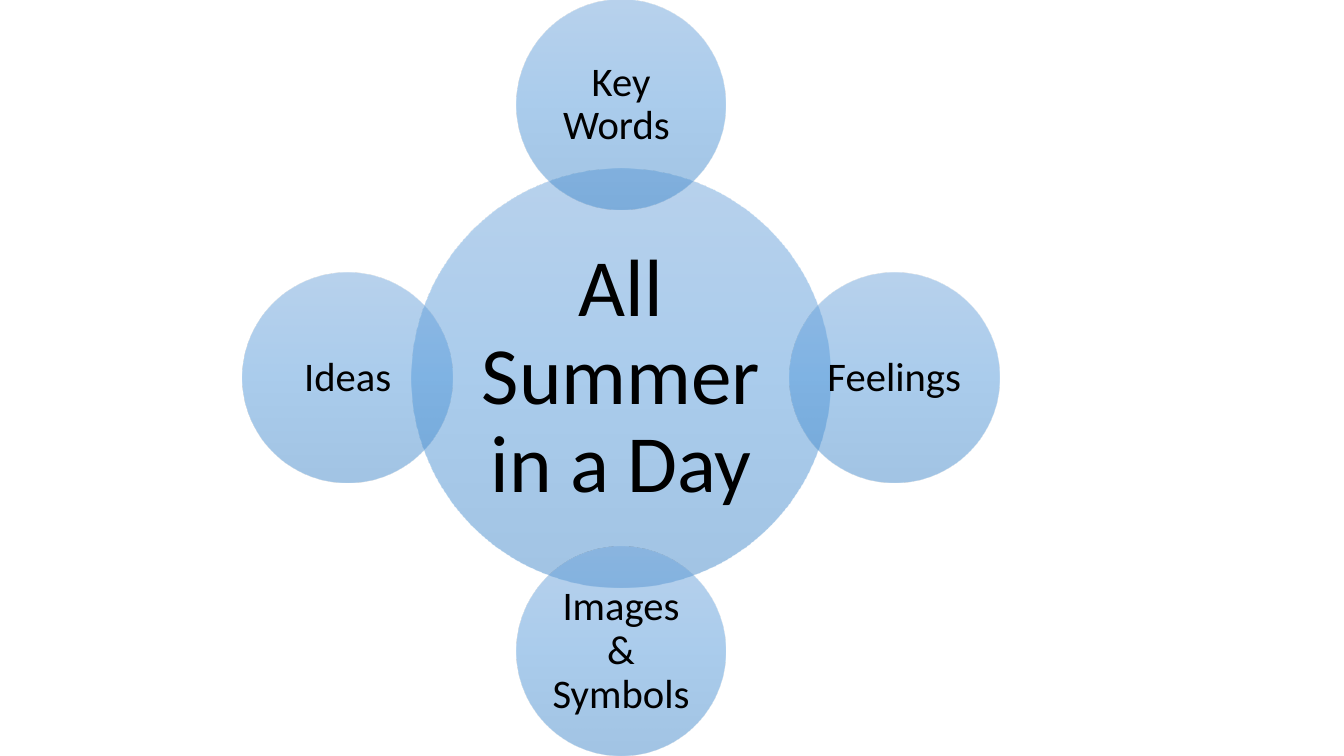
from lxml.etree import SubElement
from pptx import Presentation
from pptx.dml.color import RGBColor
from pptx.enum.shapes import MSO_SHAPE
from pptx.enum.text import MSO_ANCHOR, MSO_AUTO_SIZE, PP_ALIGN
from pptx.oxml.ns import qn
from pptx.util import Inches, Pt


def rgb(color):
    return RGBColor.from_string(color)


class Diagram:
    font = "Calibri"
    ink = "000000"
    stops = ((0, "71A6DB"), (50, "559BDB"), (100, "448ACA"))
    opacity = 50

    def __init__(self, prs):
        self.s = prs.slides.add_slide(prs.slide_layouts[5])

    def fill(self, sp):
        sp.fill.gradient()
        sp.fill.gradient_angle = 270
        gs_lst = sp._element.spPr.find(qn("a:gradFill")).find(qn("a:gsLst"))
        for gs in list(gs_lst):
            gs_lst.remove(gs)
        for pos, color in self.stops:
            gs = SubElement(gs_lst, qn("a:gs"), pos=str(pos * 1000))
            clr = SubElement(gs, qn("a:srgbClr"), val=color)
            SubElement(clr, qn("a:alpha"), val=str(self.opacity * 1000))

    def circle(self, cx, cy, size):
        sp = self.s.shapes.add_shape(
            MSO_SHAPE.OVAL, Inches(cx - size / 2), Inches(cy - size / 2),
            Inches(size), Inches(size))
        sp.shadow.inherit = False
        sp.line.fill.background()
        self.fill(sp)
        return sp

    def text(self, sp, text, size, inset):
        tf = sp.text_frame
        tf.text = text
        tf.word_wrap = True
        tf.auto_size = MSO_AUTO_SIZE.NONE
        tf.vertical_anchor = MSO_ANCHOR.MIDDLE
        tf.margin_left = tf.margin_right = Inches(inset)
        tf.margin_top = tf.margin_bottom = Inches(inset)
        p = tf.paragraphs[0]
        p.alignment = PP_ALIGN.CENTER
        p.line_spacing = 0.9
        r = p.runs[0]
        r.font.size = Pt(size)
        r.font.name = self.font
        r.font.color.rgb = rgb(self.ink)

    def title(self, cx, cy, width, text):
        sp = self.s.shapes.title
        sp.left, sp.top = Inches(cx - width / 2), Inches(cy - width / 2)
        sp.width = sp.height = Inches(width)
        self.s.shapes._spTree.append(sp._element)
        self.text(sp, text, 58, 0.08)

    def satellite(self, cx, cy, size, text):
        self.text(self.circle(cx, cy, size), text, 29, 0.04)


def main():
    prs = Presentation()
    prs.slide_width, prs.slide_height = Inches(13.33), Inches(7.5)
    diagram = Diagram(prs)
    cx, cy, hub, radius = 6.16, 3.75, 4.16, 2.71
    diagram.circle(cx, cy, hub)
    diagram.title(cx, cy, 2.94, "All Summer in a Day")
    satellites = (
        (0, -1, "Key Words "),
        (1, 0, "Feelings"),
        (0, 1, "Images & Symbols "),
        (-1, 0, "Ideas"),
    )
    for dx, dy, label in satellites:
        diagram.satellite(cx + dx * radius, cy + dy * radius, hub / 2, label)
    prs.save("out.pptx")


if __name__ == "__main__":
    main()
